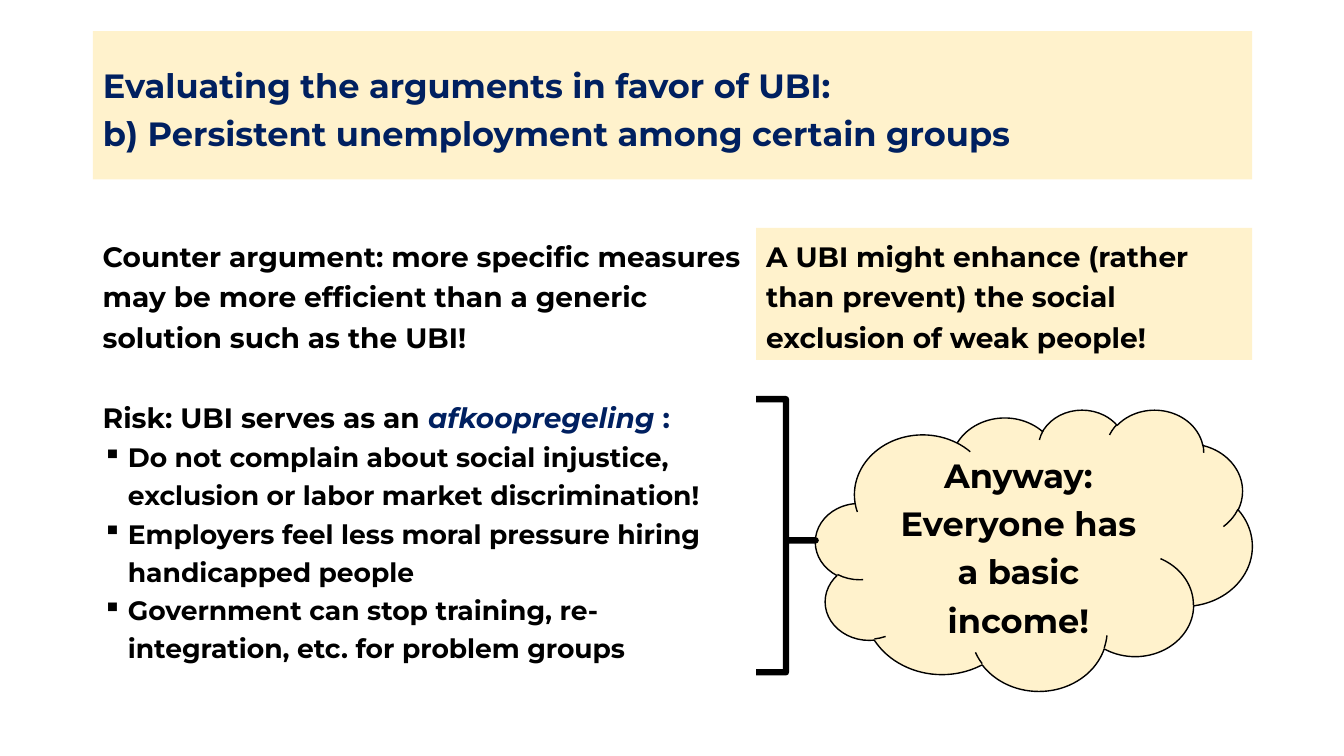
from lxml import etree
from pptx import Presentation
from pptx.dml.color import RGBColor
from pptx.enum.shapes import MSO_SHAPE
from pptx.enum.text import MSO_ANCHOR, MSO_AUTO_SIZE, PP_ALIGN
from pptx.oxml.ns import qn
from pptx.util import Inches, Pt

CREAM = RGBColor(0xFF, 0xF2, 0xCC)
NAVY = RGBColor(0x00, 0x20, 0x60)
BLACK = RGBColor(0x00, 0x00, 0x00)
FONT = "Montserrat"
RECT, CLOUD, BRACE = MSO_SHAPE.RECTANGLE, MSO_SHAPE.CLOUD, MSO_SHAPE.RIGHT_BRACE
TOP, MIDDLE = MSO_ANCHOR.TOP, MSO_ANCHOR.MIDDLE
LEFT, CENTER = PP_ALIGN.LEFT, PP_ALIGN.CENTER
NO_FIT = MSO_AUTO_SIZE.NONE

TITLE = ["Evaluating the arguments in favor of UBI:",
         "b) Persistent unemployment among certain groups"]
COUNTER = ("Counter argument: more specific measures may be more efficient "
           "than a generic solution such as the UBI!")
RISKS = ["Do not complain about social injustice, exclusion or labor market discrimination!",
         "Employers feel less moral pressure hiring handicapped people",
         "Government can stop training, re-integration, etc. for problem groups"]
WARNING = "A UBI might enhance (rather than prevent) the social exclusion of weak people!"
ANYWAY = "Anyway: Everyone has a basic income!"


def place(shape, box):
    shape.left, shape.top, shape.width, shape.height = map(Inches, box)


def set_frame(shape, anchor):
    frame = shape.text_frame
    frame.word_wrap = True
    frame.auto_size = NO_FIT
    frame.vertical_anchor = anchor
    return frame


def set_para(para, align=LEFT, before=0):
    para.alignment = align
    para.line_spacing = 1.2
    para.space_before = Pt(before)
    para.space_after = Pt(0)
    return para


def add_run(para, text, size, color=BLACK, italic=False):
    run = para.add_run()
    run.text = text
    font = run.font
    font.name, font.size = FONT, Pt(size)
    font.bold, font.italic = True, italic
    font.color.rgb = color


def add_bullet(para):
    props = para._p.get_or_add_pPr()
    props.set("marL", str(Inches(0.25)))
    props.set("indent", str(-Inches(0.25)))
    etree.SubElement(props, qn("a:buChar")).set("char", "▪")


def add_title(slide, box):
    title = slide.shapes.title
    place(title, box)
    title.fill.solid()
    title.fill.fore_color.rgb = CREAM
    para = set_para(set_frame(title, MIDDLE).paragraphs[0])
    add_run(para, TITLE[0], 24, NAVY)
    para.add_line_break()
    add_run(para, TITLE[1], 24, NAVY)


def add_body(slide, box):
    frame = set_frame(slide.shapes.add_textbox(*map(Inches, box)), TOP)
    add_run(set_para(frame.paragraphs[0]), COUNTER, 20)
    risk = set_para(frame.add_paragraph(), before=29)
    add_run(risk, "Risk: UBI serves as an ", 20)
    add_run(risk, "afkoopregeling ", 20, NAVY, True)
    add_run(risk, ":", 20, NAVY)
    for text in RISKS:
        para = set_para(frame.add_paragraph())
        add_bullet(para)
        add_run(para, text, 19)


def add_panel(slide, kind, box, text, size, anchor, align):
    """Add a cream shape with one paragraph and no outline."""
    panel = slide.shapes.add_shape(kind, *map(Inches, box))
    panel.shadow.inherit = False
    panel.fill.solid()
    panel.fill.fore_color.rgb = CREAM
    panel.line.fill.background()
    para = set_para(set_frame(panel, anchor).paragraphs[0], align)
    add_run(para, text, size)
    return panel


def set_line(shape, width):
    shape.line.color.rgb = BLACK
    shape.line.width = Pt(width)


def add_brace(slide, box):
    brace = slide.shapes.add_shape(BRACE, *map(Inches, box))
    brace.shadow.inherit = False
    brace.adjustments[0] = 0
    brace.adjustments[1] = 0.517
    brace.fill.background()
    set_line(brace, 4.5)


def main():
    deck = Presentation()
    deck.slide_width, deck.slide_height = Inches(13.33), Inches(7.5)
    slide = deck.slides.add_slide(deck.slide_layouts[5])
    left, mid, right, top = 0.92, 7.5, 12.42, 2.26
    tip = 8.09
    add_title(slide, (left, 0.31, right - left, 1.47))
    add_body(slide, (left, top, mid - left, 4.87))
    cloud = add_panel(slide, CLOUD, (tip, 4.06, right - tip, 2.79),
                      ANYWAY, 24, MIDDLE, CENTER)
    set_line(cloud, 1)
    add_panel(slide, RECT, (mid, top, right - mid, 1.31), WARNING, 20, TOP, LEFT)
    add_brace(slide, (mid, 3.96, tip - mid, 2.71))
    deck.save("out.pptx")


if __name__ == "__main__":
    main()
